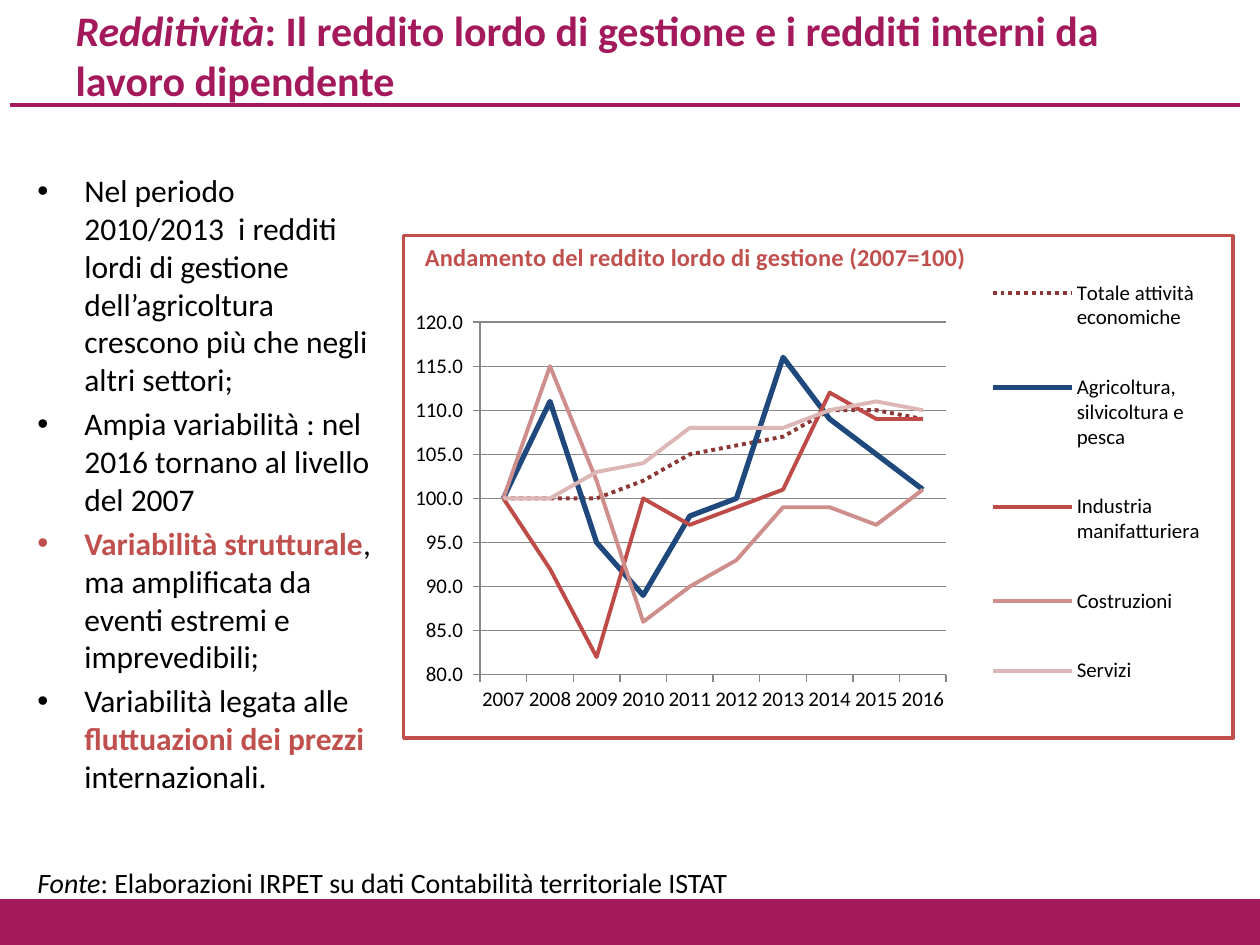
"""Build a slide on gross operating income with bullets and a line chart."""
from lxml import etree
from pptx import Presentation
from pptx import util as u
from pptx.chart import data as cd
from pptx.dml import color
from pptx.enum import chart as ce, dml, shapes, text
from pptx.oxml import ns, parse_xml

COLORS = {
    "brand": "A3195B", "accent": "C0504D", "black": "000000", "white": "FFFFFF",
    "grid": "878787", "total": "8C3836", "farm": "1F497D", "industry": "BE4B48",
    "building": "CD8E8C", "services": "DDB7B6",
}
YEARS = [str(y) for y in range(2007, 2017)]
SERIES = [
    ("Totale attività economiche", "total", 2.25,
     (100, 100, 100, 102, 105, 106, 107, 110, 110, 109)),
    ("Agricoltura, silvicoltura e pesca", "farm", 3,
     (100, 111, 95, 89, 98, 100, 116, 109, 105, 101)),
    ("Industria manifatturiera", "industry", 2.25,
     (100, 92, 82, 100, 97, 99, 101, 112, 109, 109)),
    ("Costruzioni", "building", 2.25,
     (100, 115, 102, 86, 90, 93, 99, 99, 97, 101)),
    ("Servizi", "services", 2.25,
     (100, 100, 103, 104, 108, 108, 108, 110, 111, 110)),
]
STRONG = {"bold": True, "color": "accent"}
BULLETS = [
    [("Nel periodo 2010/2013  i redditi lordi di gestione dell’agricoltura "
      "crescono più che negli altri settori;", {})],
    [("Ampia variabilità : nel 2016 tornano al livello del 2007", {})],
    [("Variabilità strutturale", STRONG),
     (", ma amplificata da eventi estremi e imprevedibili;", {})],
    [("Variabilità legata alle ", {}), ("fluttuazioni dei prezzi ", STRONG),
     ("internazionali.", {})],
]


def px(n):
    return u.Emu(round(n * 914400 / 126))


def rgb(name):
    return color.RGBColor.from_string(COLORS[name])


def set_layout(parent, index, inner=False, **fractions):
    for old in parent.findall(ns.qn("c:layout")):
        parent.remove(old)
    layout = etree.Element(ns.qn("c:layout"))
    manual = etree.SubElement(layout, ns.qn("c:manualLayout"))
    tags = {"layoutTarget": "inner"} if inner else {}
    tags.update(xMode="edge", yMode="edge", **fractions)
    for tag, value in tags.items():
        etree.SubElement(manual, ns.qn(f"c:{tag}"), val=str(value))
    parent.insert(index, layout)


class Deck:
    def __init__(self, width, height):
        self.prs = Presentation()
        self.prs.slide_width, self.prs.slide_height = px(width), px(height)
        self.s = self.prs.slides.add_slide(self.prs.slide_layouts[5])
        self.font = "Calibri"

    def style(self, font, **fmt):
        values = {"name": self.font, "bold": False, "italic": False, **fmt}
        font.color.rgb = rgb(values.pop("color", "black"))
        for key, value in values.items():
            setattr(font, key, value)

    def runs(self, p, parts, **fmt):
        for words, extra in parts:
            r = p.add_run()
            r.text = words
            self.style(r.font, **{**fmt, **extra})

    def title(self, box, parts, **fmt):
        sp = self.s.shapes.title
        sp.left, sp.top, sp.width, sp.height = map(px, box)
        tf = sp.text_frame
        tf.auto_size = text.MSO_AUTO_SIZE.NONE
        tf.vertical_anchor = text.MSO_ANCHOR.MIDDLE
        p = tf.paragraphs[0]
        p.alignment = text.PP_ALIGN.LEFT
        self.runs(p, parts, **fmt)

    def text(self, box, paragraphs, indent=0, **fmt):
        tf = self.s.shapes.add_textbox(*map(px, box)).text_frame
        tf.word_wrap = True
        for i, parts in enumerate(paragraphs):
            p = tf.add_paragraph() if i else tf.paragraphs[0]
            if i:
                p.space_before = u.Pt(3.6)
            if indent:
                props = p._p.get_or_add_pPr()
                props.set("marL", str(px(indent)))
                props.set("indent", str(-px(indent)))
                etree.SubElement(props, ns.qn("a:buFont"), typeface="Arial")
                etree.SubElement(props, ns.qn("a:buChar"), char="•")
            self.runs(p, parts, **fmt)

    def line(self, x1, y1, x2, y2, name, weight):
        c = self.s.shapes.add_connector(
            shapes.MSO_CONNECTOR.STRAIGHT, *map(px, (x1, y1, x2, y2)))
        c.line.color.rgb, c.line.width = rgb(name), u.Pt(weight)
        etree.SubElement(c._element.spPr, ns.qn("a:effectLst"))

    def bar(self, box, name):
        sp = self.s.shapes.add_shape(shapes.MSO_SHAPE.RECTANGLE, *map(px, box))
        sp.shadow.inherit = False
        sp.fill.solid()
        sp.fill.fore_color.rgb = rgb(name)
        sp.line.fill.background()

    def chart(self, box, heading):
        data = cd.CategoryChartData(number_format="0.0")
        data.categories = YEARS
        for name, _, _, values in SERIES:
            data.add_series(name, values)
        chart = self.s.shapes.add_chart(
            ce.XL_CHART_TYPE.LINE, *map(px, box), data).chart
        self.style(chart.font, size=u.Pt(12))
        chart.plots[0].vary_by_categories = False
        for series, (_, name, weight, _) in zip(chart.plots[0].series, SERIES):
            series.smooth = False
            series.marker.style = ce.XL_MARKER_STYLE.NONE
            ln = series.format.line
            ln.color.rgb, ln.width = rgb(name), u.Pt(weight)
            if name == "total":
                ln.dash_style = dml.MSO_LINE.ROUND_DOT
        self.axes(chart)
        self.heading(chart, heading)
        chart.has_legend = True
        chart.legend.position = ce.XL_LEGEND_POSITION.RIGHT
        chart.legend.include_in_layout = False
        set_layout(chart.legend._element, 1, x=0.7, y=0, w=0.27, h=0.98)
        root = chart._chartSpace
        set_layout(root.chart.plotArea, 0, True, x=0.092, y=0.172, w=0.562, h=0.702)
        frame = parse_xml(
            f'<c:spPr {ns.nsdecls("c", "a")}><a:solidFill><a:srgbClr val="{COLORS["white"]}"/>'
            f'</a:solidFill><a:ln w="{u.Pt(2)}"><a:solidFill>'
            f'<a:srgbClr val="{COLORS["accent"]}"/></a:solidFill></a:ln></c:spPr>')
        root.chart.addnext(frame)

    def axes(self, chart):
        axis = chart.value_axis
        axis.minimum_scale, axis.maximum_scale, axis.major_unit = 80, 120, 5
        axis.has_major_gridlines = True
        axis.tick_labels.number_format = "#,##0.0_ ;\\-#,##0.0\\ "
        axis.tick_labels.number_format_is_linked = False
        formats = (axis.format, axis.major_gridlines.format, chart.category_axis.format)
        for fmt in formats:
            fmt.line.color.rgb, fmt.line.width = rgb("grid"), u.Pt(0.75)

    def heading(self, chart, words):
        chart.has_title = True
        title = chart.chart_title
        p = title.text_frame.paragraphs[0]
        self.runs(p, [(words, STRONG)], size=u.Pt(14))
        set_layout(title._element, 1, x=0.02, y=0)
        title._element.find(ns.qn("c:overlay")).set("val", "1")


def main():
    deck = Deck(1260, 945)
    deck.line(10, 105, 1240, 105, "brand", 2.5)
    deck.bar((0, 899, 1260, 46), "brand")
    deck.title((63, 6, 1134, 97), [
        ("Redditività", {"italic": True}),
        (": Il reddito lordo di gestione e i redditi interni da lavoro dipendente", {}),
    ], size=u.Pt(24), bold=True, color="brand")
    deck.chart((402, 234, 833, 506), "Andamento del reddito lordo di gestione (2007=100)")
    deck.text((25, 165, 367, 674), BULLETS, indent=47, size=u.Pt(18))
    deck.text((25, 859, 718, 47), [[
        ("Fonte", {"italic": True}),
        (": Elaborazioni IRPET su dati Contabilità territoriale ISTAT", {}),
    ]], size=u.Pt(16))
    deck.prs.save("out.pptx")


if __name__ == "__main__":
    main()
